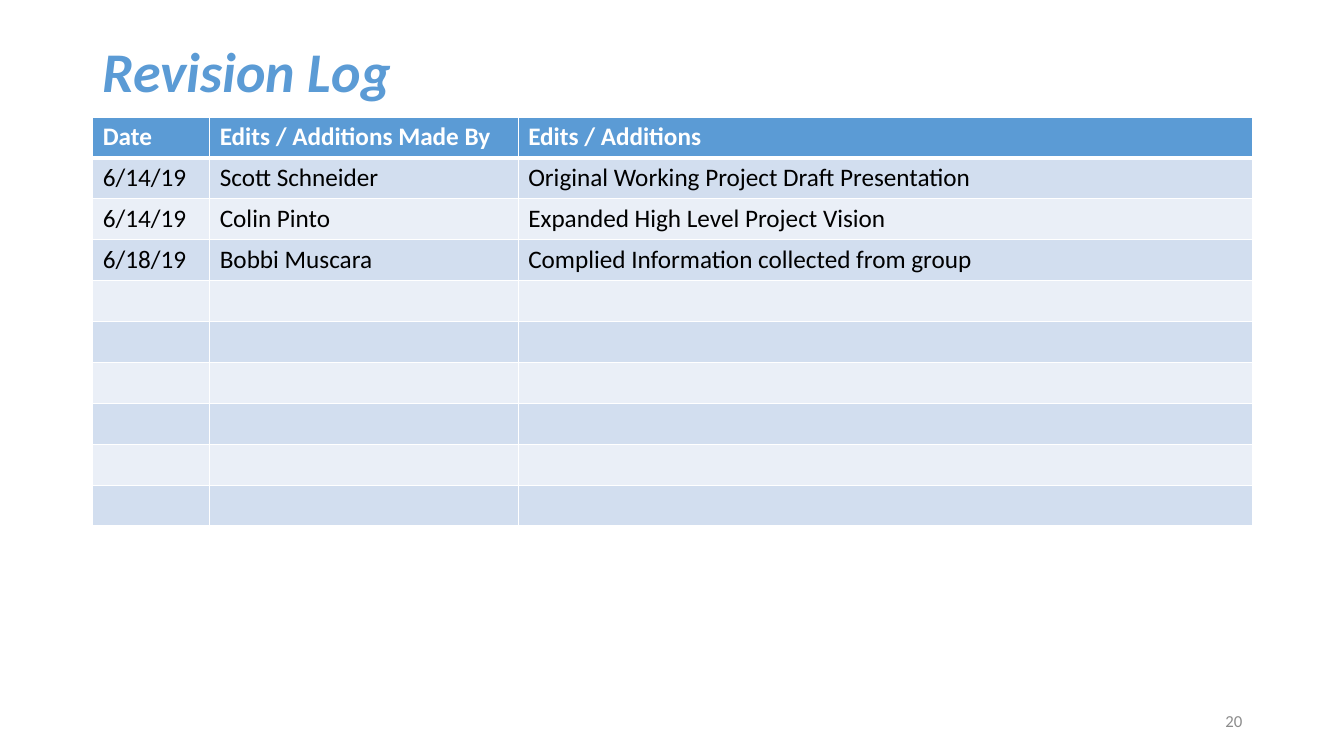
"""Build the revision log slide."""
from dataclasses import dataclass

from lxml.etree import SubElement
from pptx import Presentation
from pptx.dml.color import RGBColor
from pptx.enum.text import MSO_ANCHOR, PP_ALIGN
from pptx.oxml.ns import qn
from pptx.util import Inches, Pt

TITLE = "Revision Log"
SLIDE_NUMBER = "20"
HEADINGS = ("Date", "Edits / Additions Made By", "Edits / Additions")
REVISIONS = [
    ("6/14/19", "Scott Schneider", "Original Working Project Draft Presentation"),
    ("6/14/19", "Colin Pinto", "Expanded High Level Project Vision"),
    ("6/18/19", "Bobbi Muscara", "Complied Information collected from group"),
]
ROW_COUNT = 10
COLUMN_WIDTHS = (1.16, 3.06, 7.28)
TITLE_BOX = (0.92, 0.4, 11.5, 0.67)
TABLE_BOX = (0.92, 1.16, 11.5, 4.06)
NUMBER_BOX = (9.42, 6.95, 3, 0.4)


@dataclass(frozen=True)
class Theme:
    font: str = "Calibri"
    accent: str = "5B9BD5"
    bands: tuple = ("D2DEEF", "EAEFF7")
    white: str = "FFFFFF"
    black: str = "000000"
    gray: str = "8C8C8C"
    title_size: int = 40
    table_size: int = 18
    number_size: int = 12
    thin_line: int = 1
    thick_line: int = 3


THEME = Theme()


def add_run(paragraph, text, size, color, bold=False, italic=False):
    run = paragraph.add_run()
    run.text = text
    run.font.name = THEME.font
    run.font.size = Pt(size)
    run.font.bold = bold
    run.font.italic = italic
    run.font.color.rgb = RGBColor.from_string(color)


def set_borders(cell, top, bottom):
    properties = cell._tc.get_or_add_tcPr()
    widths = {"L": THEME.thin_line, "R": THEME.thin_line, "T": top, "B": bottom}
    for side, width in widths.items():
        line = SubElement(properties, qn(f"a:ln{side}"), w=str(Pt(width)))
        fill = SubElement(line, qn("a:solidFill"))
        SubElement(fill, qn("a:srgbClr"), val=THEME.white)


def add_title(slide):
    title = slide.shapes.title
    title.left, title.top, title.width, title.height = map(Inches, TITLE_BOX)
    title.text_frame.vertical_anchor = MSO_ANCHOR.MIDDLE
    title.text_frame.word_wrap = True
    paragraph = title.text_frame.paragraphs[0]
    paragraph.alignment = PP_ALIGN.LEFT
    paragraph.line_spacing = 0.9
    add_run(paragraph, TITLE, THEME.title_size, THEME.accent, bold=True, italic=True)


def add_log(slide):
    frame = slide.shapes.add_table(ROW_COUNT, len(HEADINGS), *map(Inches, TABLE_BOX))
    table = frame.table
    for column, width in zip(table.columns, COLUMN_WIDTHS):
        column.width = Inches(width)
    blank = ("",) * len(HEADINGS)
    entries = [HEADINGS, *REVISIONS]
    entries += [blank] * (ROW_COUNT - len(entries))
    for row_index, entry in enumerate(entries):
        header = row_index == 0
        band = THEME.accent if header else THEME.bands[(row_index - 1) % 2]
        color = THEME.white if header else THEME.black
        top = THEME.thick_line if row_index == 1 else THEME.thin_line
        bottom = THEME.thick_line if header else THEME.thin_line
        for column_index, text in enumerate(entry):
            cell = table.cell(row_index, column_index)
            set_borders(cell, top, bottom)
            cell.fill.solid()
            cell.fill.fore_color.rgb = RGBColor.from_string(band)
            paragraph = cell.text_frame.paragraphs[0]
            if text:
                add_run(paragraph, text, THEME.table_size, color, bold=header)


def add_slide_number(slide):
    box = slide.shapes.add_textbox(*map(Inches, NUMBER_BOX))
    box.text_frame.word_wrap = True
    box.text_frame.vertical_anchor = MSO_ANCHOR.MIDDLE
    paragraph = box.text_frame.paragraphs[0]
    paragraph.alignment = PP_ALIGN.RIGHT
    add_run(paragraph, SLIDE_NUMBER, THEME.number_size, THEME.gray)


def main():
    presentation = Presentation()
    presentation.slide_width = Inches(13.33)
    presentation.slide_height = Inches(7.5)
    slide = presentation.slides.add_slide(presentation.slide_layouts[5])
    add_title(slide)
    add_log(slide)
    add_slide_number(slide)
    presentation.save("out.pptx")


if __name__ == "__main__":
    main()
